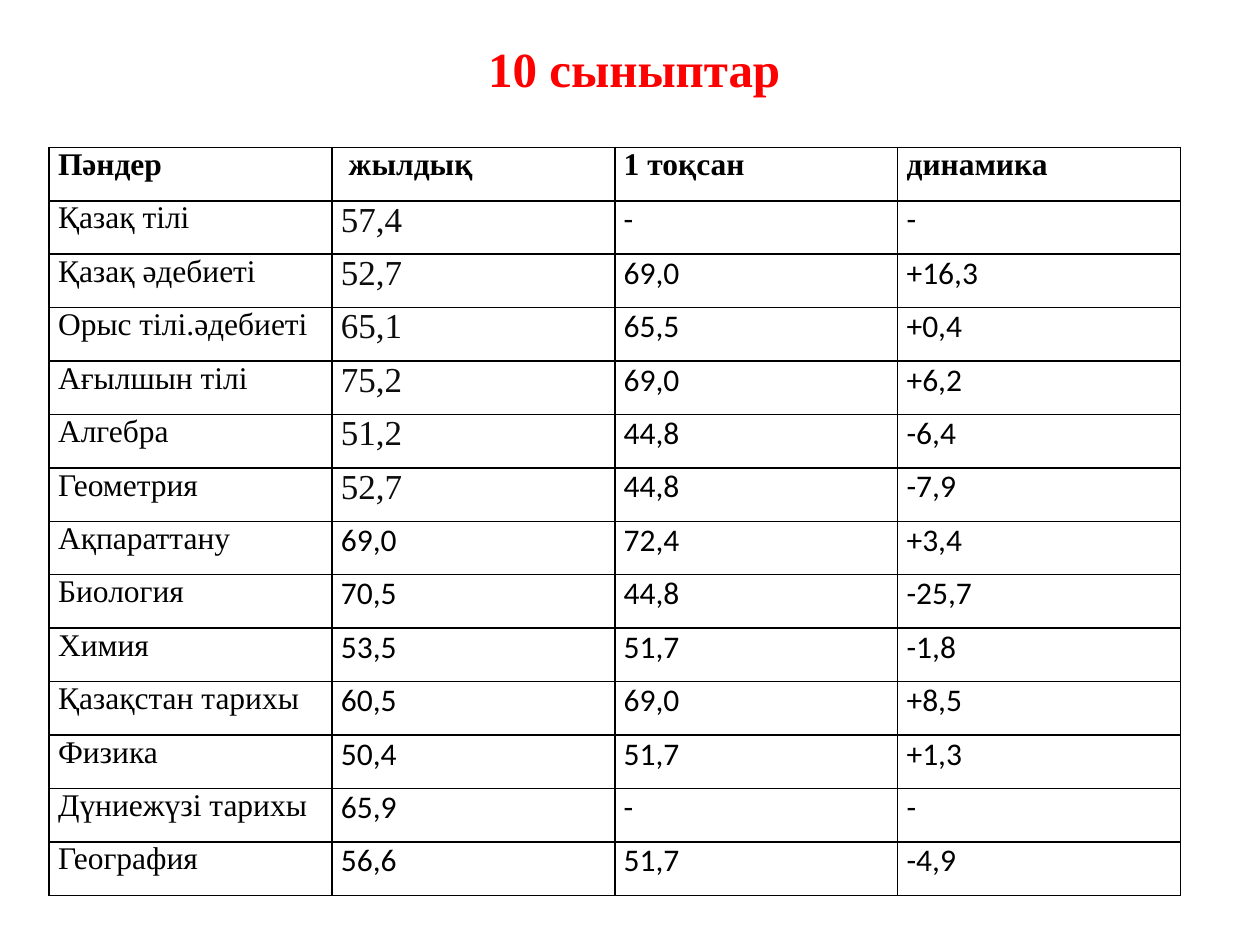
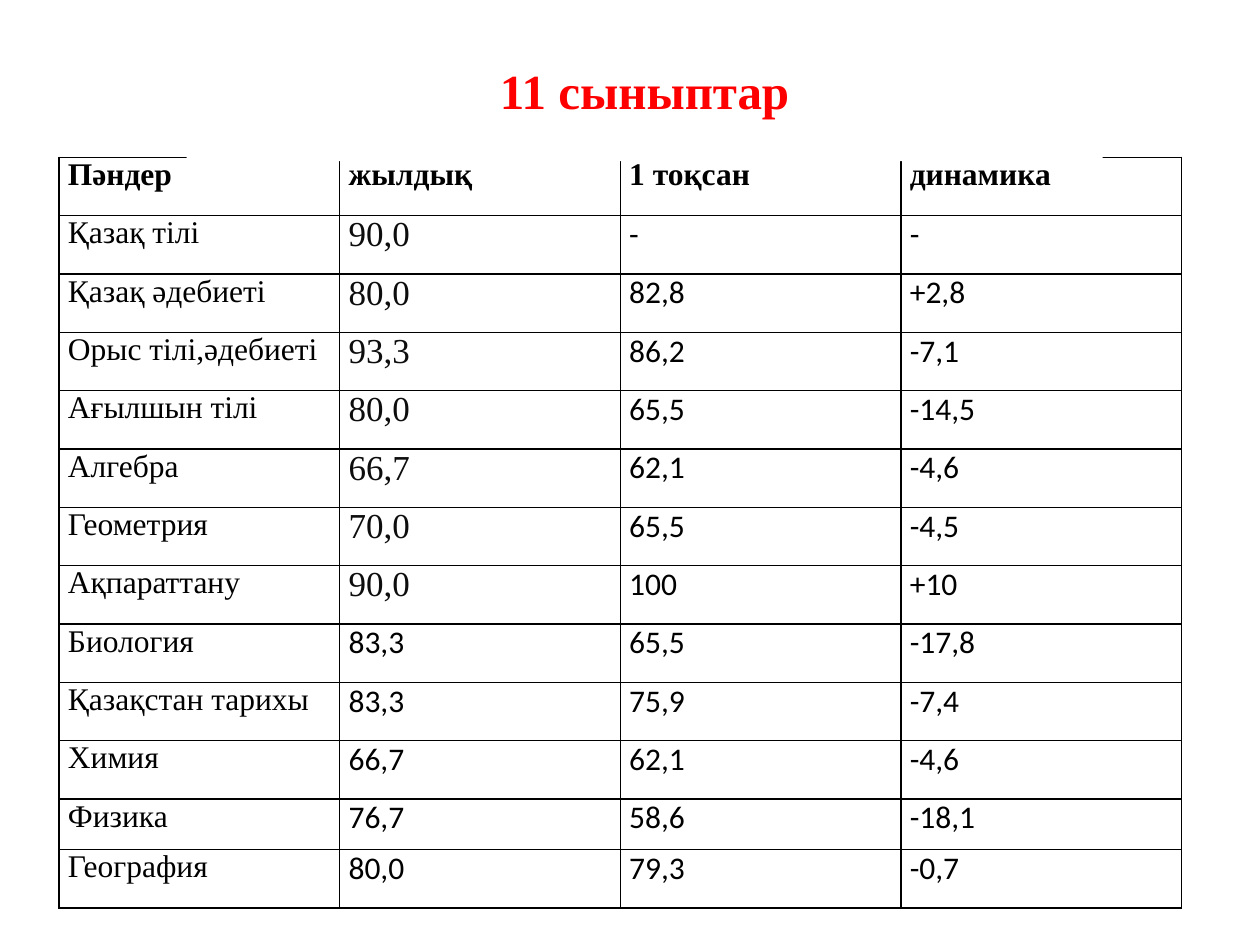
import pptx
import pptx.util
import pptx.dml.color
import pptx.enum.text
from lxml import etree
from pptx.util import Cm

HEADS = ("жылдық", "1 тоқсан", "динамика")

SLIDES = [
    dict(
        title="10 сыныптар", box=(1.57, 0, 22.43, 2.74), drop=0,
        table=(0.99, 2.97, 22.81, 15.09), short={}, large=6,
        rows=[
            ("Пәндер", " " + HEADS[0], *HEADS[1:]),
            ("Қазақ тілі", "57,4", "-", "-"),
            ("Қазақ әдебиеті", "52,7", "69,0", "+16,3"),
            ("Орыс тілі.әдебиеті", "65,1", "65,5", "+0,4"),
            ("Ағылшын тілі", "75,2", "69,0", "+6,2"),
            ("Алгебра", "51,2", "44,8", "-6,4"),
            ("Геометрия", "52,7", "44,8", "-7,9"),
            ("Ақпараттану", "69,0", "72,4", "+3,4"),
            ("Биология", "70,5", "44,8", "-25,7"),
            ("Химия", "53,5", "51,7", "-1,8"),
            ("Қазақстан тарихы", "60,5", "69,0", "+8,5"),
            ("Физика", "50,4", "51,7", "+1,3"),
            ("Дүниежүзі тарихы", "65,9", "-", "-"),
            ("География", "56,6", "51,7", "-4,9"),
        ]),
    dict(
        title="11 сыныптар", box=(3.76, 0, 18.47, 3.25), drop=0.36,
        table=(1.19, 3.17, 22.63, 15.14), short={"Физика": 1.02}, large=7,
        rows=[
            ("Пәндер", *HEADS),
            ("Қазақ тілі", "90,0", "-", "-"),
            ("Қазақ әдебиеті", "80,0", "82,8", "+2,8"),
            ("Орыс тілі,әдебиеті", "93,3", "86,2", "-7,1"),
            ("Ағылшын тілі", "80,0", "65,5", "-14,5"),
            ("Алгебра", "66,7", "62,1", "-4,6"),
            ("Геометрия", "70,0", "65,5", "-4,5"),
            ("Ақпараттану", "90,0", "100", "+10"),
            ("Биология", "83,3", "65,5", "-17,8"),
            ("Қазақстан тарихы", "83,3", "75,9", "-7,4"),
            ("Химия", "66,7", "62,1", "-4,6"),
            ("Физика", "76,7", "58,6", "-18,1"),
            ("География", "80,0", "79,3", "-0,7"),
        ]),
]


class Theme:
    serif, sans = "Times New Roman", "Calibri"
    red, black, dark, white = "FF0000", "000000", "0D0D0D", "FFFFFF"
    title, body, large = 28, 18, 20
    line = 1


def paint(fill, color):
    fill.solid()
    fill.fore_color.rgb = pptx.dml.color.RGBColor.from_string(color)


def write(frame, text, font=Theme.serif, size=Theme.body, color=Theme.black,
          bold=False, align="JUSTIFY"):
    para = frame.paragraphs[0]
    para.alignment = pptx.enum.text.PP_ALIGN[align]
    run = para.add_run()
    run.text = text
    run.font.name = font
    run.font.size = pptx.util.Pt(size)
    run.font.bold = bold
    paint(run.font.fill, color)


def border(cell):
    props = cell._tc.get_or_add_tcPr()
    space = "http://schemas.openxmlformats.org/drawingml/2006/main"
    for spot, side in enumerate("LRTB"):
        line = etree.Element(f"{{{space}}}ln{side}", w=str(pptx.util.Pt(Theme.line)))
        fill = etree.SubElement(line, f"{{{space}}}solidFill")
        etree.SubElement(fill, f"{{{space}}}srgbClr", val=Theme.black)
        props.insert(spot, line)


def style(row, col, large):
    if row == 0:
        return dict(bold=True)
    if col == 0:
        return {}
    if col == 1 and row <= large:
        return dict(size=Theme.large, color=Theme.dark)
    return dict(font=Theme.sans, align="LEFT")


def add_grid(slide, data):
    rows, short = data["rows"], data["short"]
    left, top, width, height = data["table"]
    count = len(rows[0])
    grid = slide.shapes.add_table(
        len(rows), count, Cm(left), Cm(top), Cm(width), Cm(height)).table
    grid.first_row = grid.horz_banding = False
    for col in grid.columns:
        col.width = Cm(width / count)
    tall = (height - sum(short.values())) / (len(rows) - len(short))
    for r, row in enumerate(rows):
        grid.rows[r].height = Cm(short.get(row[0], tall))
        for c, text in enumerate(row):
            cell = grid.cell(r, c)
            cell.margin_left = cell.margin_right = Cm(0.18)
            cell.margin_top = cell.margin_bottom = 0
            paint(cell.fill, Theme.white)
            border(cell)
            write(cell.text_frame, text, **style(r, c, data["large"]))


def add_title(slide, data):
    title = slide.shapes.title
    title.left, title.top, title.width, title.height = map(Cm, data["box"])
    paint(title.fill, Theme.white)
    frame = title.text_frame
    frame.auto_size = pptx.enum.text.MSO_AUTO_SIZE.NONE
    frame.vertical_anchor = pptx.enum.text.MSO_ANCHOR.MIDDLE
    frame.margin_top, frame.margin_bottom = Cm(data["drop"]), 0
    write(frame, data["title"], size=Theme.title, color=Theme.red,
          bold=True, align="CENTER")
    slide.shapes._spTree.append(title._element)


def main():
    deck = pptx.Presentation()
    deck.slide_width, deck.slide_height = Cm(25.4), Cm(19.05)
    for data in SLIDES:
        slide = deck.slides.add_slide(deck.slide_layouts[5])
        add_grid(slide, data)
        add_title(slide, data)
    deck.save("out.pptx")


if __name__ == "__main__":
    main()
